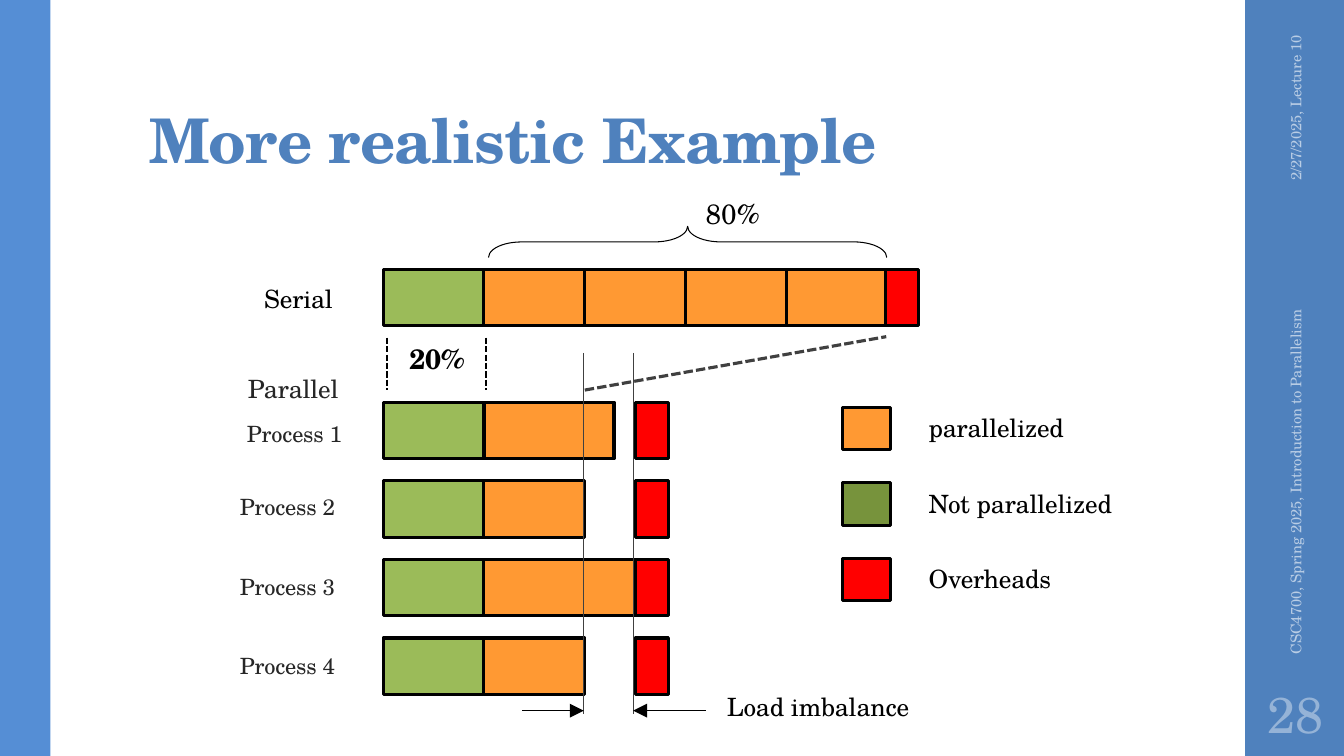
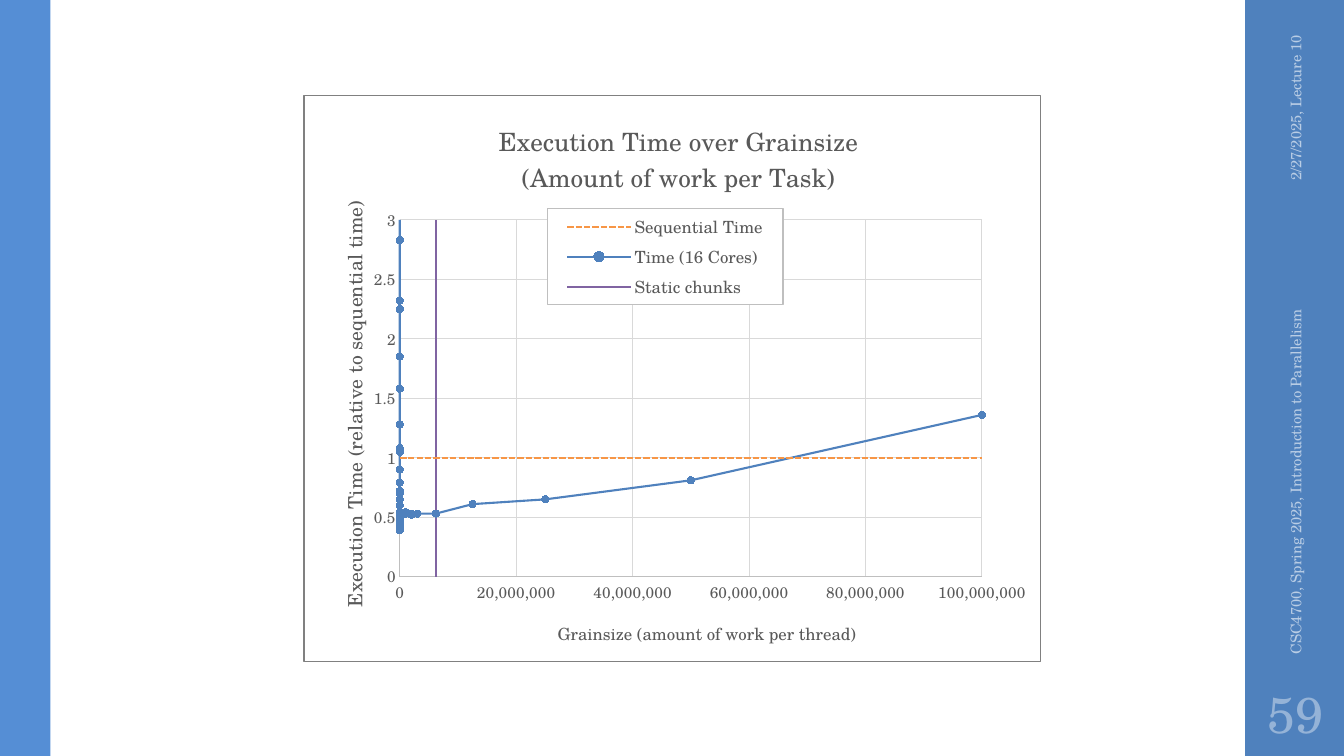
from lxml import etree
from pptx import Presentation
from pptx.chart.data import XyChartData
from pptx.dml.color import RGBColor
from pptx.enum.chart import XL_CHART_TYPE as CT, XL_LEGEND_POSITION as LP, XL_MARKER_STYLE as MS, XL_TICK_MARK as TM
from pptx.enum.dml import MSO_LINE
from pptx.enum.shapes import MSO_CONNECTOR, MSO_SHAPE
from pptx.enum.text import MSO_ANCHOR, PP_ALIGN
from pptx.oxml import parse_xml
from pptx.oxml.ns import nsdecls, qn
from pptx.util import Inches, Pt

BLUE = RGBColor(0x4F, 0x81, 0xBD)
BAND = RGBColor(0x55, 0x8E, 0xD5)
PALE = RGBColor(0xB9, 0xCD, 0xE5)
NUMBER = RGBColor(0x95, 0xB3, 0xD7)
BLACK = RGBColor(0, 0, 0)
INK = RGBColor(0x26, 0x26, 0x26)
GUIDE = RGBColor(0x40, 0x40, 0x40)
GREEN = RGBColor(0x9B, 0xBB, 0x59)
OLIVE = RGBColor(0x77, 0x93, 0x3C)
ORANGE = RGBColor(0xFF, 0x99, 0x33)
RED = RGBColor(0xFF, 0, 0)
GREY = RGBColor(0x59, 0x59, 0x59)
AXIS = RGBColor(0xBF, 0xBF, 0xBF)
GRID = RGBColor(0xD9, 0xD9, 0xD9)
AMBER = RGBColor(0xF7, 0x96, 0x46)
PURPLE = RGBColor(0x80, 0x64, 0xA2)
FONT = "TeX Gyre Schola"
DASH = MSO_LINE.SQUARE_DOT

prs = Presentation()
prs.slide_width, prs.slide_height = Inches(13.33), Inches(7.5)
COL, ROW = prs.slide_width / 13.33, prs.slide_height / 7.5


def text(s, box, t, size, color, bold=False, align=PP_ALIGN.LEFT, anchor=MSO_ANCHOR.MIDDLE,
         inset=0, spacing=0, rotation=0):
    x, y, w, h = box
    sp = s.shapes.add_textbox(int(x * COL), int(y * ROW), int(w * COL), int(h * ROW))
    sp.rotation = rotation
    tf = sp.text_frame
    margins = {"margin_" + side: Inches(inset) for side in ("left", "right", "top", "bottom")}
    for k, v in {**margins, "word_wrap": True, "vertical_anchor": anchor}.items():
        setattr(tf, k, v)
    p = tf.paragraphs[0]
    p.alignment = align
    r = p.add_run()
    r.text = t
    for k, v in {"name": FONT, "size": Pt(size), "bold": bold}.items():
        setattr(r.font, k, v)
    r.font.color.rgb = color
    if spacing:
        r.font._element.set("spc", str(spacing))
    return p


def line(s, x1, y1, x2, y2, color, width, dash=None, arrow=False):
    c = s.shapes.add_connector(MSO_CONNECTOR.STRAIGHT, int(x1 * COL), int(y1 * ROW), int(x2 * COL), int(y2 * ROW))
    c.line.color.rgb = color
    c.line.width = Pt(width)
    if dash:
        c.line.dash_style = dash
    if arrow:
        etree.SubElement(c.line._get_or_add_ln(), qn("a:tailEnd"), type="triangle", w="lg", len="lg")
    etree.SubElement(c._element.spPr, qn("a:effectLst"))


slides = []
for number in ("28", "59"):
    s = prs.slides.add_slide(prs.slide_layouts[6])
    slides.append(s)
    for x, w, color in ((12.35, 1, BLUE), (0, 0.5, BAND)):
        sp = s.shapes.add_shape(MSO_SHAPE.RECTANGLE, int(x * COL), 0, int(w * COL), prs.slide_height)
        sp.shadow.inherit = False
        sp.fill.solid()
        sp.fill.fore_color.rgb = color
        sp.line.fill.background()
    text(s, (11.81, 1.09, 2.08, 0.4), "2/27/2025, Lecture 10", 10.5, PALE,
         align=PP_ALIGN.RIGHT, inset=0.1, rotation=270)
    text(s, (10.89, 4.43, 3.92, 0.4), "CSC4700, Spring 2025, Introduction to Parallelism", 10.5, PALE,
         inset=0.1, rotation=270)
    text(s, (12.35, 6.75, 1, 0.65), number, 36, NUMBER, align=PP_ALIGN.CENTER, inset=0.05)

s = slides[0]
p = text(s, (1.38, 0.32, 10.6, 1.53), "More realistic Example", 44, BLUE, bold=True,
         anchor=MSO_ANCHOR.BOTTOM, inset=0.1, spacing=-50)
p.line_spacing = 0.9

LEFT, BAR, SLIM = 3.8, 0.56, 0.33
SERIAL, PARALLEL, PITCH = 2.67, 3.99, 0.78
KEY, KEY_PITCH = 4.04, 0.75
boxes = [(LEFT, SERIAL, 1, BAR, GREEN)]
boxes += [(LEFT + i, SERIAL, 1, BAR, ORANGE) for i in range(1, 5)]
boxes.append((LEFT + 4.98, SERIAL, SLIM, BAR, RED))
for i, work in enumerate((1.29, 1, 1.5, 1)):
    y = PARALLEL + i * PITCH
    boxes += [(LEFT, y, 1, BAR, GREEN), (LEFT + 1, y, work, BAR, ORANGE), (LEFT + 2.5, y, SLIM, BAR, RED)]
for i, (label, color) in enumerate((("parallelized", ORANGE), ("Not parallelized", OLIVE), ("Overheads", RED))):
    y = KEY + i * KEY_PITCH
    boxes.append((8.36, y, 0.47, 0.42, color))
    text(s, (9.21, y, 2.4, 0.4), label, 18, BLACK, spacing=-10)
for x, y, w, h, color in boxes:
    sp = s.shapes.add_shape(MSO_SHAPE.RECTANGLE, int(x * COL), int(y * ROW), int(w * COL), int(h * ROW))
    sp.shadow.inherit = False
    sp.fill.solid()
    sp.fill.fore_color.rgb = color
    sp.line.color.rgb = BLACK
    sp.line.width = Pt(2.25)

for x, y, t, size, color, bold in (
    (4.06, 3.55, "20%", 20, BLACK, True),
    (7, 2.12, "80%", 20, BLACK, False),
    (2.62, 2.96, "Serial", 18, BLACK, False),
    (2.46, 3.85, "Parallel", 18, INK, False),
    (2.45, 4.3, "Process 1", 16, INK, False),
    (2.38, 5.03, "Process 2", 16, INK, False),
    (2.38, 5.82, "Process 3", 16, INK, False),
    (2.38, 6.6, "Process 4", 16, INK, False),
    (7.21, 7.01, "Load imbalance", 18, BLACK, False),
):
    text(s, (x, y - 0.2, 2.2, 0.4), t, size, color, bold, spacing=-10)

BRACE_W, BRACE_H = 0.31, 3.95
sp = s.shapes.add_shape(MSO_SHAPE.LEFT_BRACE, int((6.82 - BRACE_W / 2) * COL), int((2.4 - BRACE_H / 2) * ROW),
                        int(BRACE_W * COL), int(BRACE_H * ROW))
sp.rotation = 90
sp.adjustments[0] = 1.06
sp.shadow.inherit = False
sp.fill.background()
sp.line.color.rgb = BLACK
sp.line.width = Pt(0.75)

for x in (3.84, 4.82):
    line(s, x, 3.35, x, 3.87, BLACK, 1.5, DASH)
line(s, 5.8, 3.87, 8.79, 3.34, GUIDE, 2.25, DASH)
for x, start in ((5.79, 5.18), (6.28, 7)):
    line(s, x, 3.5, x, 7.08, GUIDE, 0.75)
    line(s, start, 7.05, x, 7.05, BLACK, 0.5, arrow=True)

s = slides[1]
grainsize = [0] * 39 + [1000000] * 5 + [2000000] * 3
grainsize += [3000000, 6200000, 12500000, 25000000, 50000000, 100000000]
times = [16.66, 8.36, 4.28, 2.83, 2.32, 2.25, 1.85, 1.58, 1.28, 1.08, 1.05, 0.9, 0.79, 0.72, 0.7, 0.65, 0.6, 0.46,
         0.48, 0.48, 0.39, 0.39, 0.39, 0.39, 0.4, 0.42, 0.42, 0.45, 0.45, 0.47, 0.49, 0.51, 0.51, 0.52, 0.53, 0.54,
         0.54, 0.54, 0.54, 0.54, 0.53, 0.53, 0.54, 0.54, 0.53, 0.53, 0.52, 0.53, 0.53, 0.61, 0.65, 0.81, 1.36]
cd = XyChartData()
for name, xs, ys in (
    ("Sequential Time", grainsize, [1] * len(grainsize)),
    ("Time (16 Cores)", grainsize, times),
    ("Static chunks", [6200000, 6200000], [0, 16.66]),
):
    series = cd.add_series(name)
    for x, y in zip(xs, ys):
        series.add_data_point(x, y)
chart = s.shapes.add_chart(CT.XY_SCATTER_LINES_NO_MARKERS, int(3.01 * COL), int(0.94 * ROW),
                           int(7.32 * COL), int(5.63 * ROW), cd).chart
chart.font.name = FONT
chart.font.size = Pt(10)
plot = chart.plots[0]
plot.vary_by_categories = False
for series, color in zip(plot.series, (AMBER, BLUE, PURPLE)):
    series.smooth = False
    series.format.line.color.rgb = color
    series.format.line.width = Pt(1.5)
    series.marker.style = MS.NONE
plot.series[0].format.line.dash_style = DASH
marker = plot.series[1].marker
marker.style, marker.size = MS.CIRCLE, 5
marker.format.fill.solid()
marker.format.fill.fore_color.rgb = BLUE
marker.format.line.color.rgb = BLUE

xa, ya = chart.category_axis, chart.value_axis
for axis, top, step, fmt in ((xa, 100000000, 20000000, "#,##0"), (ya, 3, 0.5, "General")):
    for k, v in {"minimum_scale": 0, "maximum_scale": top, "major_unit": step, "has_major_gridlines": True,
                 "major_tick_mark": TM.NONE, "minor_tick_mark": TM.NONE}.items():
        setattr(axis, k, v)
    labels = axis.tick_labels
    labels.number_format, labels.number_format_is_linked = fmt, False
    labels.font.name, labels.font.size, labels.font.color.rgb = FONT, Pt(11), GREY
    for ln, color in ((axis.format.line, AXIS), (axis.major_gridlines.format.line, GRID)):
        ln.color.rgb = color
        ln.width = Pt(0.75)

chart.has_legend = True
legend = chart.legend
legend.position = LP.RIGHT
legend.include_in_layout = True
legend.font.name, legend.font.size, legend.font.color.rgb = FONT, Pt(12), GREY

chart.has_title = xa.has_title = ya.has_title = True
layouts = [(chart._chartSpace.chart.plotArea, 0, {"x": 0.13, "y": 0.22, "w": 0.79, "h": 0.63}),
           (legend._element, 1, {"x": 0.33, "y": 0.2, "w": 0.32, "h": 0.17})]
for title, lines, size, x, y in (
    (chart.chart_title, ("Execution Time over Grainsize", "(Amount of work per Task)"), 18, 0.26, 0.04),
    (xa.axis_title, ("Grainsize (amount of work per thread)",), 12, 0.34, 0.92),
    (ya.axis_title, ("Execution Time (relative to sequential time)",), 14, 0.04, 0.18),
):
    tf = title.text_frame
    for i, t in enumerate(lines):
        p = tf.add_paragraph() if i else tf.paragraphs[0]
        r = p.add_run()
        r.text = t
        for k, v in {"name": FONT, "size": Pt(size), "bold": False}.items():
            setattr(r.font, k, v)
        r.font.color.rgb = GREY
    layouts.append((title._element, 1, {"x": x, "y": y}))
body = ya.axis_title.text_frame._txBody.find(qn("a:bodyPr"))
body.set("rot", "-5400000")
body.set("vert", "horz")

for el, place, box in layouts:
    for old in el.findall(qn("c:layout")):
        el.remove(old)
    layout = parse_xml("<c:layout %s><c:manualLayout/></c:layout>" % nsdecls("c"))
    values = {"layoutTarget": "inner"} if place == 0 else {}
    values.update({"xMode": "edge", "yMode": "edge", **box})
    for k, v in values.items():
        etree.SubElement(layout[0], qn("c:" + k), val=str(v))
    el.insert(place, layout)

for el, border in ((chart._chartSpace, "808080"), (legend._element, "BFBFBF")):
    el.find(qn("c:txPr")).addprevious(parse_xml(
        '<c:spPr %s><a:solidFill><a:srgbClr val="FFFFFF"/></a:solidFill><a:ln w="9525"><a:solidFill>'
        '<a:srgbClr val="%s"/></a:solidFill></a:ln></c:spPr>' % (nsdecls("c", "a"), border)))

prs.save("out.pptx")
